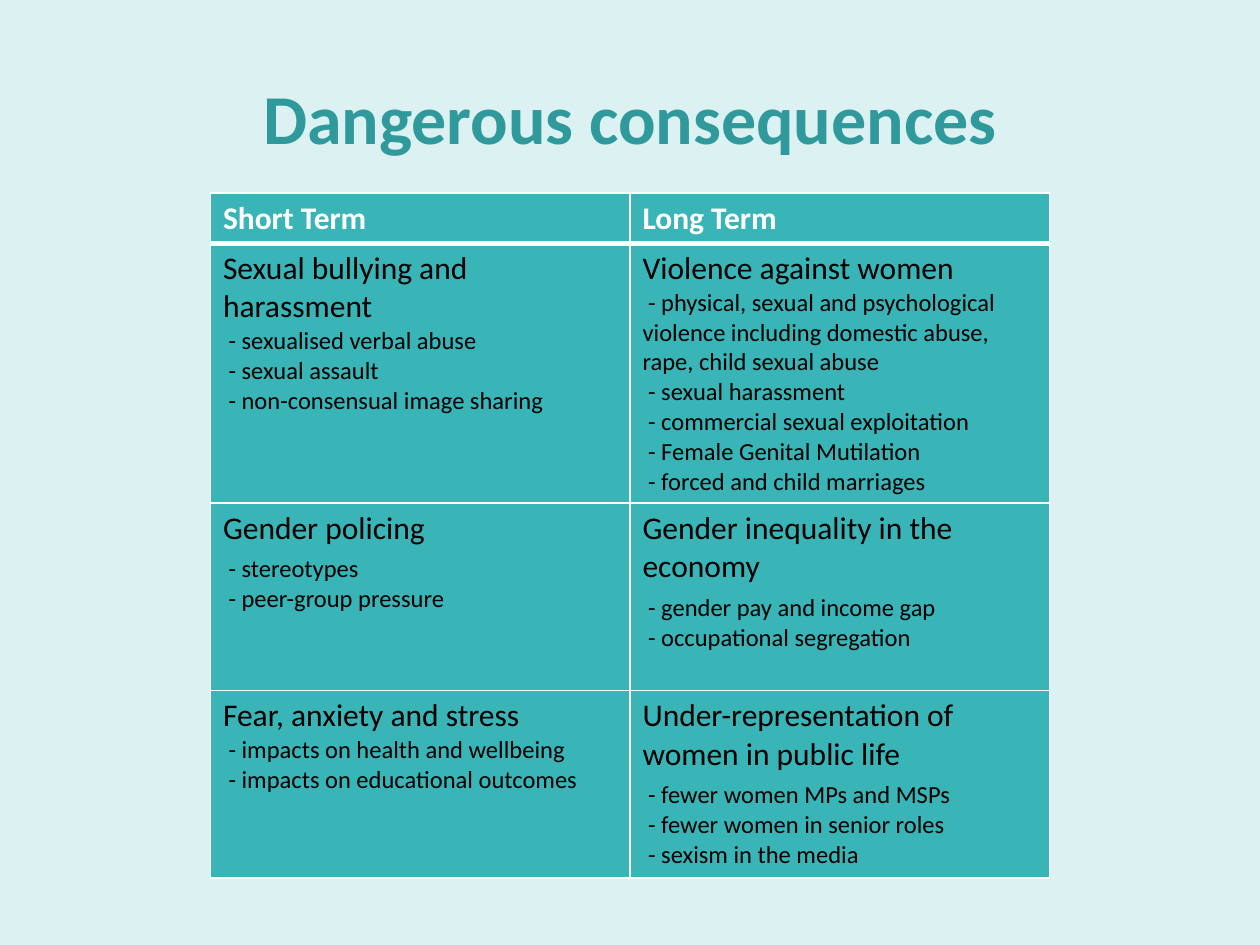
from lxml.etree import SubElement
from pptx import Presentation
from pptx.dml.color import RGBColor
from pptx.enum.text import MSO_ANCHOR, PP_ALIGN
from pptx.oxml.ns import qn
from pptx.util import Inches, Pt

FONT = "Calibri"
COLORS = {
    "background": "DBF1F2",
    "title": "30999C",
    "cell": "39B4B7",
    "white": "FFFFFF",
    "black": "000000",
}
HEADERS = ["Short Term", "Long Term"]
CONSEQUENCES = [
    [
        ("Sexual bullying and harassment", 0,
         ["sexualised verbal abuse", "sexual assault", "non-consensual image sharing"]),
        ("Violence against women", 0,
         ["physical, sexual and psychological violence including domestic abuse, "
          "rape, child sexual abuse",
          "sexual harassment", "commercial sexual exploitation",
          "Female Genital Mutilation", "forced and child marriages"]),
    ],
    [
        ("Gender policing", 4, ["stereotypes", "peer-group pressure"]),
        ("Gender inequality in the economy", 4,
         ["gender pay and income gap", "occupational segregation"]),
    ],
    [
        ("Fear, anxiety and stress", 0,
         ["impacts on health and wellbeing", "impacts on educational outcomes"]),
        ("Under-representation of women in public life", 4,
         ["fewer women MPs and MSPs", "fewer women in senior roles", "sexism in the media"]),
    ],
]
ROW_HEIGHTS = [0.4, 2.06, 1.49, 1.49]


def color(name):
    return RGBColor.from_string(COLORS[name])


def write(paragraph, text, size, color_name, bold=False):
    paragraph.text = text
    font = paragraph.runs[0].font
    font.name = FONT
    font.size = Pt(size)
    font.bold = bold
    font.color.rgb = color(color_name)


def add_title(slide, text):
    box = slide.shapes.add_textbox(Inches(0.5), Inches(0.3), Inches(9), Inches(1.25))
    frame = box.text_frame
    frame.word_wrap = True
    frame.vertical_anchor = MSO_ANCHOR.MIDDLE
    frame.paragraphs[0].alignment = PP_ALIGN.CENTER
    write(frame.paragraphs[0], text, 40, "title", bold=True)


def style_cell(cell, top=1, bottom=1):
    properties = cell._tc.get_or_add_tcPr()
    for side, width in (("L", 1), ("R", 1), ("T", top), ("B", bottom)):
        line = SubElement(properties, qn(f"a:ln{side}"), w=str(Pt(width)))
        fill = SubElement(line, qn("a:solidFill"))
        SubElement(fill, qn("a:srgbClr"), val=COLORS["white"])
    cell.fill.solid()
    cell.fill.fore_color.rgb = color("cell")


def fill_consequence(cell, heading, gap, examples):
    frame = cell.text_frame
    write(frame.paragraphs[0], heading, 18, "black")
    for index, example in enumerate(examples):
        paragraph = frame.add_paragraph()
        write(paragraph, f" - {example}", 14, "black")
        if index == 0:
            paragraph.space_before = Pt(gap)


def add_consequence_table(slide):
    table = slide.shapes.add_table(
        len(ROW_HEIGHTS), len(HEADERS),
        Inches(1.67), Inches(1.53), Inches(6.66), Inches(sum(ROW_HEIGHTS)),
    ).table
    table.horz_banding = False
    for row, height in zip(table.rows, ROW_HEIGHTS):
        row.height = Inches(height)
    for column, header in enumerate(HEADERS):
        cell = table.cell(0, column)
        write(cell.text_frame.paragraphs[0], header, 18, "white", bold=True)
        style_cell(cell, bottom=3)
    for row, entries in enumerate(CONSEQUENCES, start=1):
        for column, entry in enumerate(entries):
            cell = table.cell(row, column)
            fill_consequence(cell, *entry)
            style_cell(cell, top=3 if row == 1 else 1)


def main():
    presentation = Presentation()
    presentation.slide_width = Inches(10)
    presentation.slide_height = Inches(7.5)
    slide = presentation.slides.add_slide(presentation.slide_layouts[6])
    slide.background.fill.solid()
    slide.background.fill.fore_color.rgb = color("background")
    add_title(slide, "Dangerous consequences")
    add_consequence_table(slide)
    presentation.save("out.pptx")


if __name__ == "__main__":
    main()
